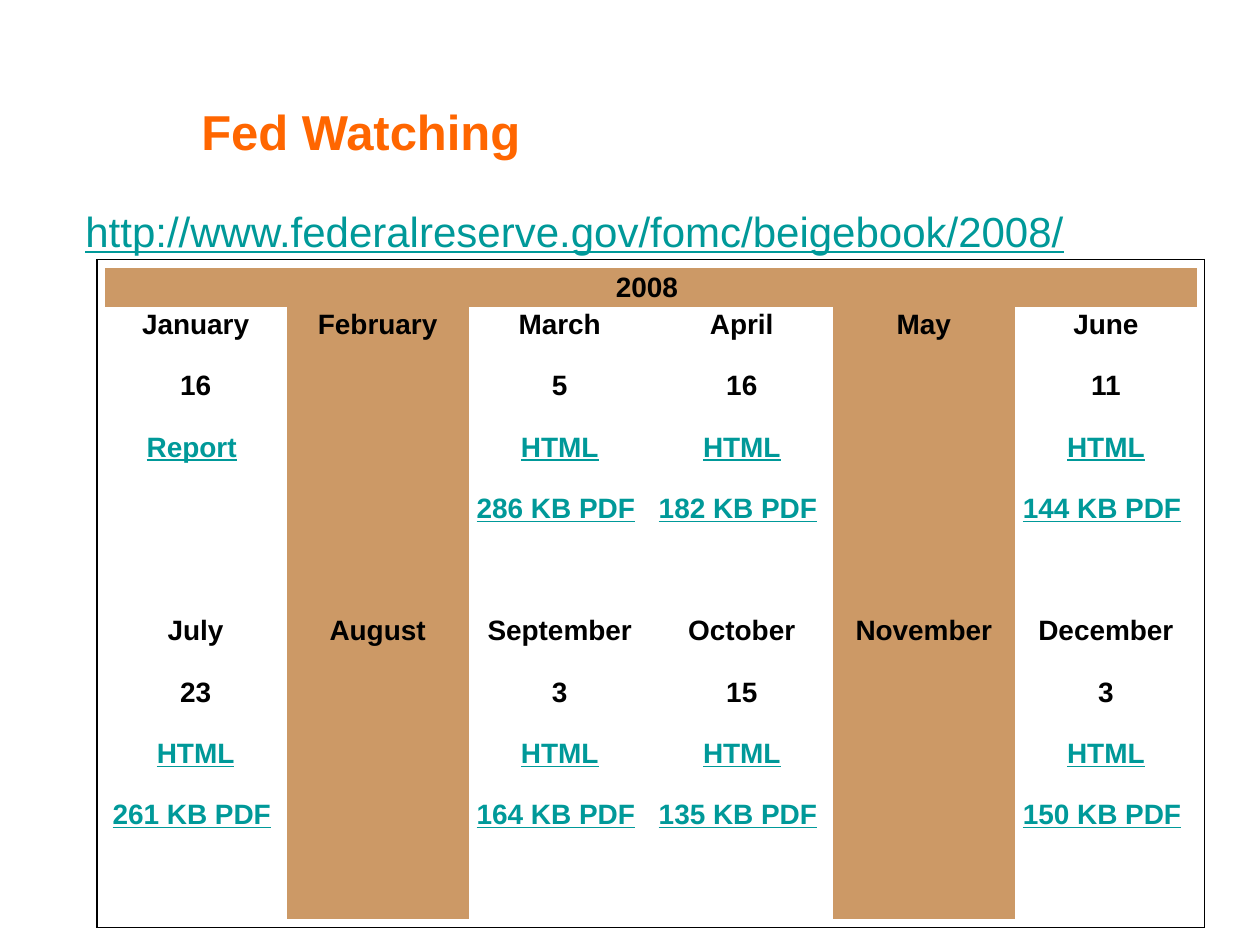
from lxml import etree
from pptx import Presentation
from pptx.dml.color import RGBColor
from pptx.enum.text import MSO_ANCHOR, PP_ALIGN
from pptx.oxml.ns import qn
from pptx.util import Inches, Pt

CENTER = PP_ALIGN.CENTER
MIDDLE = MSO_ANCHOR.MIDDLE
ORANGE = RGBColor(0xFF, 0x66, 0x00)
TEAL = RGBColor(0x00, 0x99, 0x99)
TAN = RGBColor(0xCC, 0x99, 0x66)
BLACK = RGBColor(0x00, 0x00, 0x00)
WHITE = RGBColor(0xFF, 0xFF, 0xFF)
FONT = "Arial"
NO_STYLE = "{2D5ABB26-0587-4C30-8999-92F81FD0307C}"

MONTHS = [
    [("January", "16", "Report "), ("February",), ("March", "5", "HTML", "286 KB PDF "),
     ("April", "16", "HTML", "182 KB PDF "), ("May",), ("June", "11", "HTML", "144 KB PDF ")],
    [("July", "23", "HTML", "261 KB PDF "), ("August",), ("September", "3", "HTML", "164 KB PDF "),
     ("October", "15", "HTML", "135 KB PDF "), ("November",), ("December", "3", "HTML", "150 KB PDF ")],
]


def add_run(paragraph, text, size, color, bold=False, underline=False):
    """Append one formatted run to a paragraph."""
    run = paragraph.add_run()
    run.text = text
    font = run.font
    font.name, font.size, font.bold, font.underline = FONT, Pt(size), bold, underline
    font.color.rgb = color


def add_line(slide, box, text, size, color, bold=False, underline=False):
    """Place a single line of text in the given box."""
    frame = slide.shapes.add_textbox(*map(Inches, box)).text_frame
    frame.word_wrap = True
    add_run(frame.paragraphs[0], text, size, color, bold, underline)


def add_plain_table(slide, box, row_heights, columns):
    """Add an unstyled table with equal columns."""
    left, top, width, height = map(Inches, box)
    table = slide.shapes.add_table(len(row_heights), columns, left, top, width, height).table
    table.first_row = table.horz_banding = False
    table._tbl.tblPr.find(qn("a:tableStyleId")).text = NO_STYLE
    for row, row_height in zip(table.rows, row_heights):
        row.height = Inches(row_height)
    return table


def fill_cell(cell, lines, color):
    """Write centred lines into a cell, with the links after the date."""
    cell.margin_left = cell.margin_right = Inches(0.02)
    cell.margin_top = cell.margin_bottom = Inches(0.02)
    cell.fill.solid()
    cell.fill.fore_color.rgb = color
    for index, line in enumerate(lines):
        frame = cell.text_frame
        paragraph = frame.add_paragraph() if index else frame.paragraphs[0]
        paragraph.alignment = CENTER
        if index:
            paragraph.space_before = Pt(17.2)
        is_link = index > 1
        add_run(paragraph, line.rstrip(), 16, TEAL if is_link else BLACK, True, is_link)
        if line.endswith(" "):
            add_run(paragraph, " ", 16, BLACK)


def add_calendar(slide, box):
    """Build the year calendar, shading months without a report."""
    header_height = 0.3
    month_height = (box[3] - header_height) / len(MONTHS)
    heights = [header_height] + [month_height] * len(MONTHS)
    calendar = add_plain_table(slide, box, heights, len(MONTHS[0]))
    year = calendar.cell(0, 0)
    year.merge(calendar.cell(0, len(MONTHS[0]) - 1))
    year.vertical_anchor = MIDDLE
    fill_cell(year, ["2008 "], TAN)
    for row, months in enumerate(MONTHS, 1):
        for column, lines in enumerate(months):
            fill_cell(calendar.cell(row, column), lines, WHITE if len(lines) > 1 else TAN)


def add_frame(slide, box):
    """Draw the outer border as an empty one-cell table."""
    cell = add_plain_table(slide, box, [box[3]], 1).cell(0, 0)
    properties = cell._tc.get_or_add_tcPr()
    for side in ("a:lnL", "a:lnR", "a:lnT", "a:lnB"):
        border = etree.SubElement(properties, qn(side), w=str(Pt(1)))
        solid = etree.SubElement(border, qn("a:solidFill"))
        etree.SubElement(solid, qn("a:srgbClr"), val=str(BLACK))
    cell.fill.background()


def main():
    """Build and save the slide."""
    presentation = Presentation()
    presentation.slide_width, presentation.slide_height = Inches(10), Inches(7.5)
    slide = presentation.slides.add_slide(presentation.slide_layouts[6])
    add_line(slide, (0.58, 1.58, 9.17, 1.11),
             "http://www.federalreserve.gov/fomc/beigebook/2008/", 24, TEAL, underline=True)
    add_line(slide, (1.5, 0.76, 8, 0.57), "Fed Watching", 28, ORANGE, bold=True)
    add_calendar(slide, (0.83, 2.13, 8.67, 5.16))
    add_frame(slide, (0.77, 2.06, 8.79, 5.3))
    presentation.save("out.pptx")


if __name__ == "__main__":
    main()
